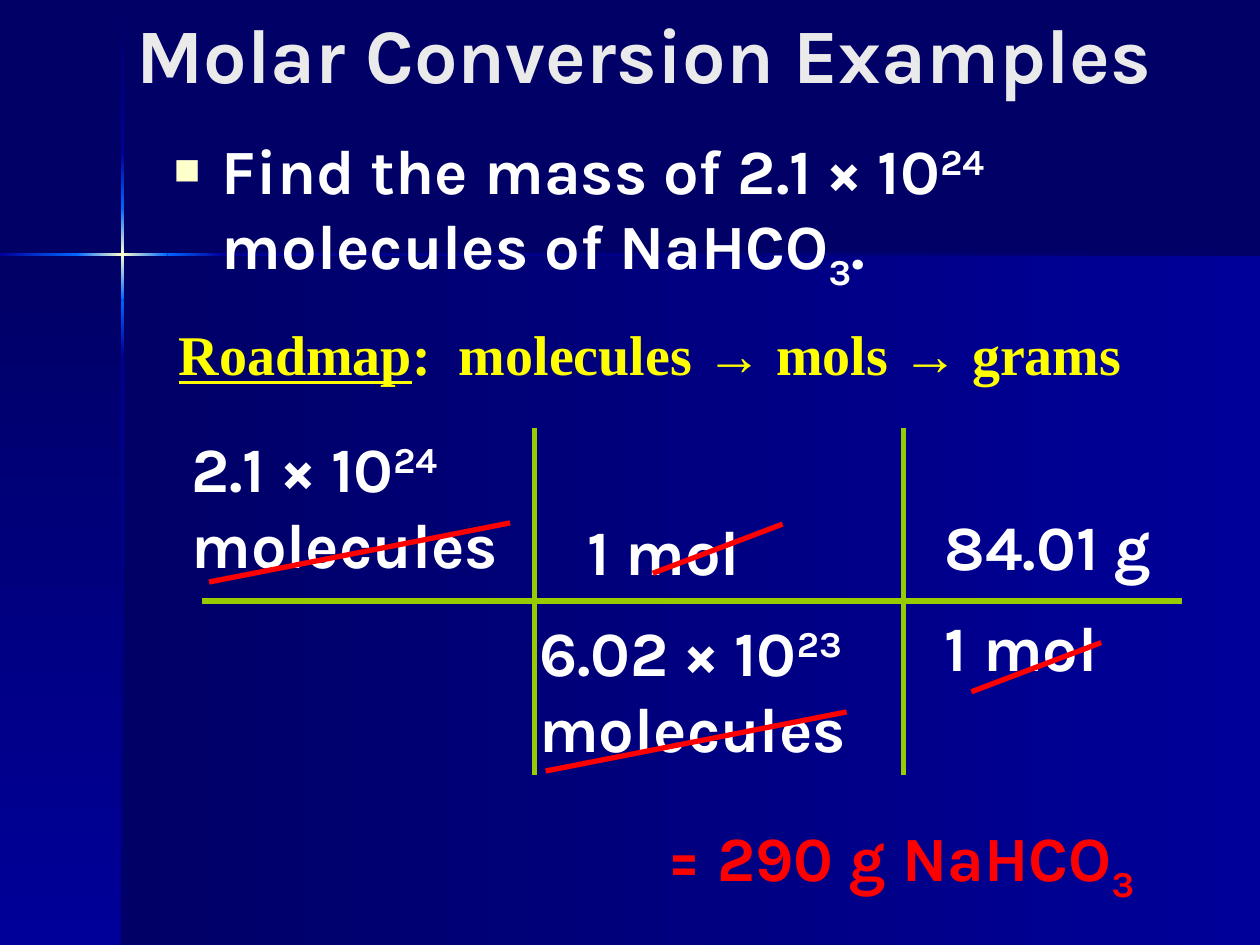
from copy import deepcopy

from pptx import Presentation
from pptx.dml.color import RGBColor as RGB
from pptx.enum.shapes import MSO_CONNECTOR as CONN, MSO_SHAPE as SHAPE
from pptx.enum.text import MSO_ANCHOR as ANCHOR, MSO_AUTO_SIZE as AUTO, PP_ALIGN as ALIGN
from pptx.oxml import parse_xml
from pptx.oxml.ns import nsdecls, qn
from pptx.util import Pt

COLORS = {"dark": "000066", "navy": "000099", "blue": "0066FF", "cream": "FFFFCC",
          "title": "EAEAEA", "white": "FFFFFF", "red": "FF0000", "green": "99CC00",
          "yellow": "FFFF00"}
W, H = 720, 540
CROSS_X, CROSS_Y = 70, 145.5
HAIR = 1.4
HANG = 27.4
SUP, SUB = 30000, -25000
BODY = {"name": "Karla", "size": Pt(36), "bold": True}
TITLE = {**BODY, "size": Pt(44)}
ROADMAP = {"name": "Times New Roman", "size": Pt(32), "bold": True}


def rgb(name):
    return RGB.from_string(COLORS[name])


def add_gradient(slide, box, stops, vertical):
    """Rectangle shaded evenly through the named colours, left to right or downwards."""
    sp = slide.shapes.add_shape(SHAPE.RECTANGLE, *map(Pt, box))
    sp.shadow.inherit = False
    sp.line.fill.background()
    sp.fill.gradient()
    sp.fill.gradient_angle = 270 if vertical else 0
    gs_list = sp._element.spPr.find(".//" + qn("a:gsLst"))
    for _ in stops[2:]:
        gs_list.append(deepcopy(gs_list[-1]))
    for i, (stop, color) in enumerate(zip(sp.fill.gradient_stops, stops)):
        stop.color.rgb = rgb(color)
        stop.position = i / (len(stops) - 1)


def add_backdrop(slide):
    fill = slide.background.fill
    fill.solid()
    fill.fore_color.rgb = rgb("dark")
    add_gradient(slide, (CROSS_X, CROSS_Y, W - CROSS_X, H - CROSS_Y), ("dark", "navy"), False)
    add_gradient(slide, (0, CROSS_Y, CROSS_X, H - CROSS_Y), ("dark", "navy"), True)
    rise, glow, fall = ("navy", "blue"), ("blue", "cream", "blue"), ("blue", "navy")
    for top, bottom, stops in ((0.7, 87, ("dark", "navy")), (203, H, ("navy", "dark")),
                               (171.4, 203, fall), (87, 118.8, rise), (118.8, 171.4, glow)):
        add_gradient(slide, (CROSS_X - HAIR / 2, top, HAIR, bottom - top), stops, True)
    for left, right, stops in ((127.4, W, ("navy", "dark")), (0, 43.5, rise),
                               (95.8, 127.4, fall), (43.5, 95.8, glow)):
        add_gradient(slide, (left, CROSS_Y - HAIR / 2, right - left, HAIR), stops, False)


def write_paragraph(p, runs, color, font):
    """Write runs given as (text, baseline shift) pairs."""
    for text, shift in runs:
        r = p.add_run()
        r.text = text
        for key, value in font.items():
            setattr(r.font, key, value)
        r.font.color.rgb = rgb(color)
        if shift:
            r._r.get_or_add_rPr().set("baseline", str(shift))


def set_indent(p, left, first):
    pPr = p._p.get_or_add_pPr()
    pPr.set("marL", str(Pt(left)))
    pPr.set("indent", str(Pt(first)))
    return pPr


def add_text(slide, box, paragraphs, color="white", font=BODY):
    """Text box; each paragraph is (runs, space before, left margin)."""
    tf = slide.shapes.add_textbox(*map(Pt, box)).text_frame
    tf.word_wrap = True
    for i, (runs, before, left) in enumerate(paragraphs):
        p = tf.add_paragraph() if i else tf.paragraphs[0]
        p.space_before = Pt(before)
        set_indent(p, left, 0)
        write_paragraph(p, runs, color, font)
    return tf


def fill_placeholder(ph, box, runs, color, font, anchor):
    for key, value in zip(("left", "top", "width", "height"), box):
        setattr(ph, key, Pt(value))
    tf = ph.text_frame
    tf.word_wrap, tf.auto_size, tf.vertical_anchor = True, AUTO.NONE, anchor
    p = tf.paragraphs[0]
    p.space_before = Pt(0)
    write_paragraph(p, runs, color, font)
    return p


def add_square_bullet(p):
    pPr = set_indent(p, HANG, -HANG)
    for xml in (f'<a:buClr {nsdecls("a")}><a:srgbClr val="{COLORS["cream"]}"/></a:buClr>',
                f'<a:buSzPct {nsdecls("a")} val="70000"/>',
                f'<a:buFont {nsdecls("a")} typeface="Arial"/>',
                f'<a:buChar {nsdecls("a")} char="■"/>'):
        pPr.append(parse_xml(xml))


def add_line(slide, x1, y1, x2, y2, color):
    line = slide.shapes.add_connector(CONN.STRAIGHT, *map(Pt, (x1, y1, x2, y2)))
    line.line.color.rgb = rgb(color)
    line.line.width = Pt(3)
    line._element.spPr.append(parse_xml(f'<a:effectLst {nsdecls("a")}/>'))


def add_strikes(slide):
    for x, y, dx, dy in ((119.5, 332.6, 172, 33.8), (311.8, 440.6, 172, 33.8),
                         (373, 327.6, 74.2, 28.1), (555.1, 395.3, 74.2, 28.1)):
        add_line(slide, x + dx, y - dy, x, y, "red")


def add_conversion_grid(slide):
    molecules = [("molecules", 0)]
    one_mol = [("1 mol", 0)]
    add_text(slide, (102.2, 241.9, 208.1, 106.6),
             [([("2.1 × 10", 0), ("24", SUP)], 0, 0), (molecules, 0, 0)])
    add_text(slide, (301, 289.4, 236.9, 121.7),
             [(one_mol, 0, HANG), ([("6.02 × 10", 0), ("23", SUP)], 14.4, 0),
              (molecules, 0, 0)])
    add_text(slide, (532.8, 286.6, 187.2, 121.7),
             [([("84.01 g", 0)], 0, 0), (one_mol, 14.4, 0)])
    add_line(slide, 115.2, 343.4, 675.4, 343.4, "green")
    for x in (305.3, 516.2):
        add_line(slide, x, 244.8, x, 442.8, "green")
    add_strikes(slide)


def main():
    prs = Presentation()
    prs.slide_width, prs.slide_height = Pt(W), Pt(H)
    slide = prs.slides.add_slide(prs.slide_layouts[1])
    title, body = slide.placeholders
    add_backdrop(slide)
    for ph in (title, body):  # bring in front of the backdrop
        slide.shapes._spTree.append(ph._element)

    p = fill_placeholder(title, (16.6, -15.1, 703.4, 90),
                         [("Molar Conversion Examples", 0)], "title", TITLE, ANCHOR.MIDDLE)
    p.alignment = ALIGN.CENTER
    p = fill_placeholder(body, (92.2, 71.3, 588.2, 107.3),
                         [("Find the mass of 2.1 × 10", 0), ("24", SUP),
                          (" molecules of NaHCO", 0), ("3", SUB), (".", 0)],
                         "white", BODY, ANCHOR.TOP)
    add_square_bullet(p)

    add_conversion_grid(slide)
    add_text(slide, (374.4, 464.4, 345.6, 61.9),
             [([("= 290 g NaHCO", 0), ("3", SUB)], 0, 0)], "red")
    tf = add_text(slide, (95, 179.3, 586.1, 45.4),
                  [([("Roadmap", 0), (":  molecules → mols → grams", 0)], 0, 0)],
                  "yellow", ROADMAP)
    tf.paragraphs[0].runs[0].font.underline = True
    prs.save("out.pptx")


if __name__ == "__main__":
    main()
